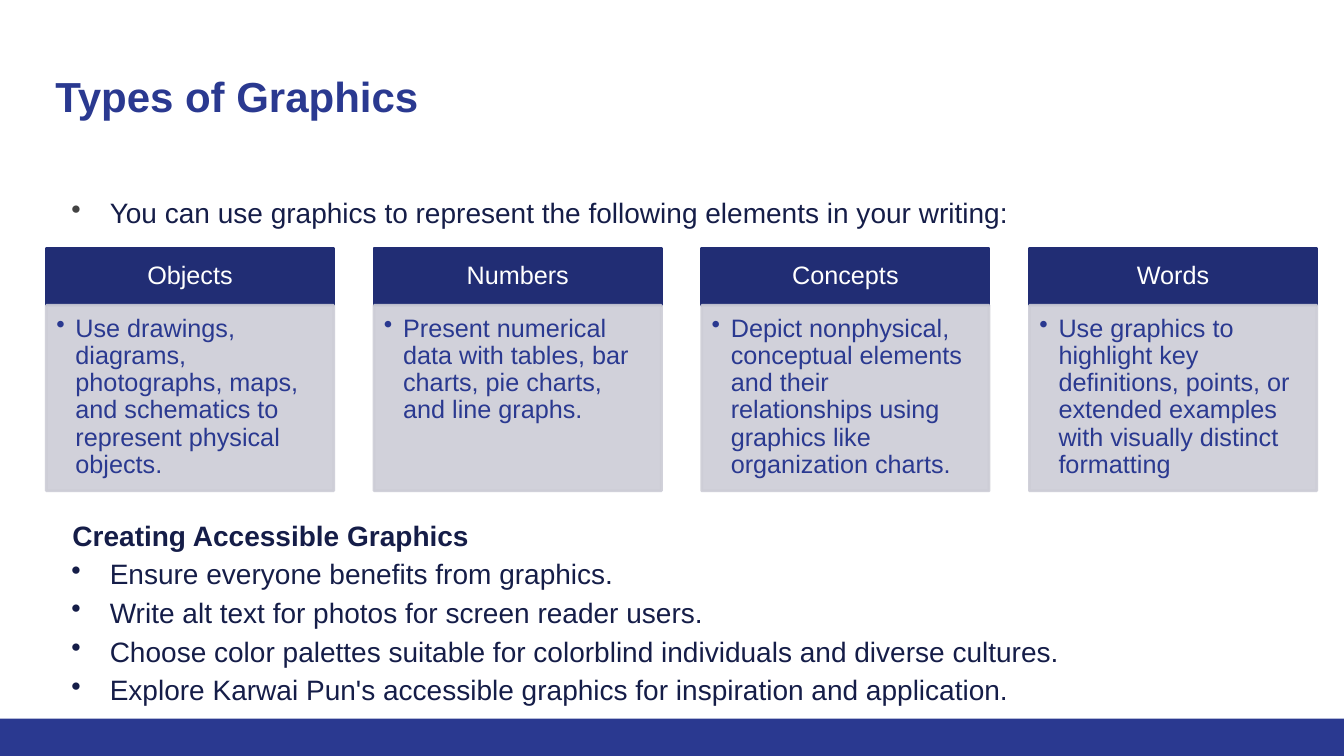
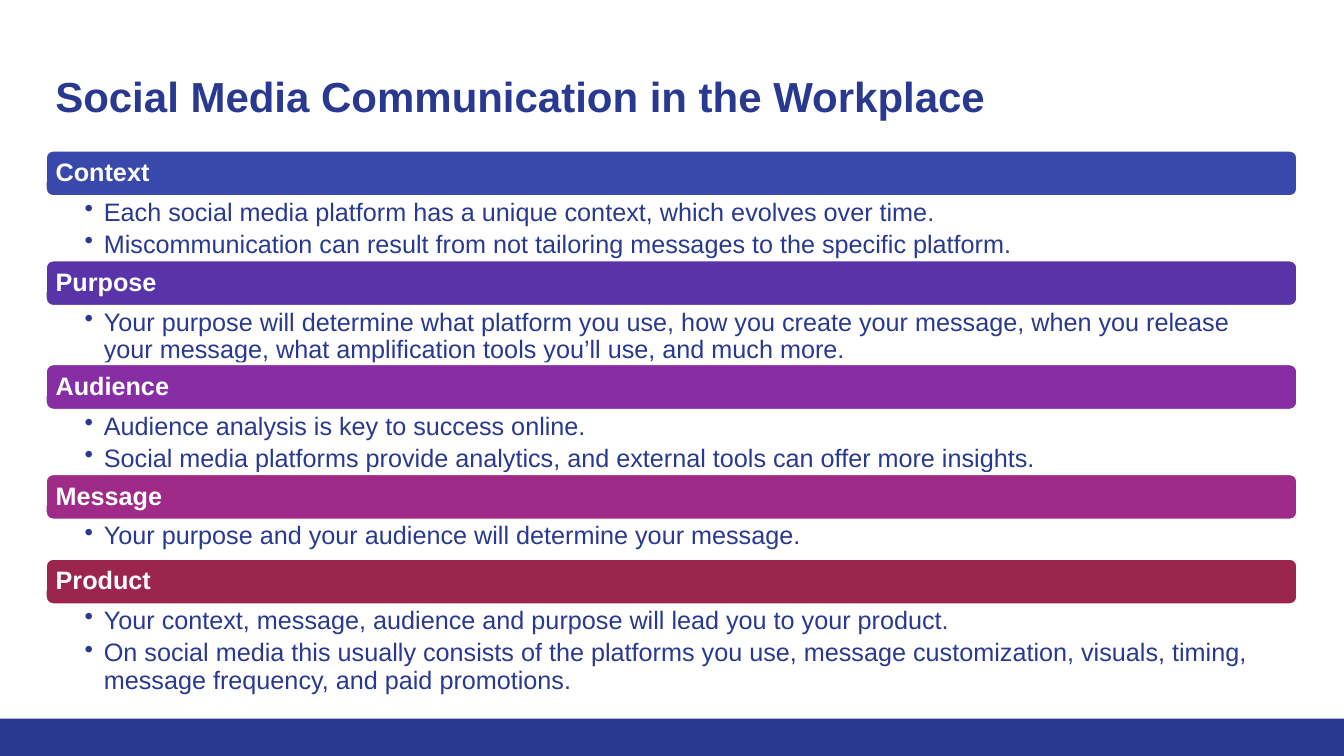
from lxml import etree
from pptx import Presentation
from pptx import util as u
from pptx.dml.color import RGBColor
from pptx.enum import shapes, text
from pptx.oxml.ns import qn

Inches, Pt = u.Inches, u.Pt

BLUE = RGBColor(0x2A, 0x39, 0x90)
NAVY = RGBColor(0x21, 0x2D, 0x74)
INK = RGBColor(0x15, 0x1D, 0x48)
CARD_GRAY = RGBColor(0xCD, 0xCD, 0xD6)
BULLET_GRAY = RGBColor(0x43, 0x43, 0x43)
WHITE = RGBColor(0xFF, 0xFF, 0xFF)
INDIGO = RGBColor(0x39, 0x49, 0xAB)
VIOLET = RGBColor(0x58, 0x34, 0xA8)
PURPLE = RGBColor(0x88, 0x2E, 0xA4)
MAGENTA = RGBColor(0xA0, 0x2A, 0x87)
CRIMSON = RGBColor(0x9C, 0x25, 0x4D)

FONT = "Arial"
SLIDE_W, SLIDE_H = 13.33, 7.5
FOOTER_H = 0.37
MARGIN, CONTENT_W = 0.45, 12.42
EVEN_INSETS = (0.1, 0.1, 0.1, 0.1)

CARDS = [
    ("Objects", "Use drawings, diagrams, photographs, maps, and schematics to "
                "represent physical objects."),
    ("Numbers", "Present numerical data with tables, bar charts, pie charts, "
                "and line graphs."),
    ("Concepts", "Depict nonphysical, conceptual elements and their "
                 "relationships using graphics like organization charts."),
    ("Words", "Use graphics to highlight key definitions, points, or extended "
              "examples with visually distinct formatting"),
]

ACCESSIBILITY = [
    "Ensure everyone benefits from graphics.",
    "Write alt text for photos for screen reader users.",
    "Choose color palettes suitable for colorblind individuals and diverse cultures.",
    "Explore Karwai Pun's accessible graphics for inspiration and application.",
]

SECTIONS = [
    ("Context", INDIGO, 0.63, [
        "Each social media platform has a unique context, which evolves over time.",
        "Miscommunication can result from not tailoring messages to the specific platform.",
    ]),
    ("Purpose", VIOLET, 0.57, [
        "Your purpose will determine what platform you use, how you create your "
        "message, when you release your message, what amplification tools you’ll "
        "use, and much more.",
    ]),
    ("Audience", PURPLE, 0.63, [
        "Audience analysis is key to success online.",
        "Social media platforms provide analytics, and external tools can offer "
        "more insights.",
    ]),
    ("Message", MAGENTA, 0.38, [
        "Your purpose and your audience will determine your message.",
    ]),
    ("Product", CRIMSON, 0.9, [
        "Your context, message, audience and purpose will lead you to your product.",
        "On social media this usually consists of the platforms you use, message "
        "customization, visuals, timing, message frequency, and paid promotions.",
    ]),
]


def set_indent(paragraph, left, first=0.0, bullet=False, bullet_color=None):
    props = paragraph._p.get_or_add_pPr()
    props.set("marL", str(Inches(left)))
    props.set("indent", str(Inches(first)))
    if bullet_color is not None:
        color = etree.SubElement(props, qn("a:buClr"))
        etree.SubElement(color, qn("a:srgbClr")).set("val", str(bullet_color))
    if bullet:
        etree.SubElement(props, qn("a:buChar")).set("char", "•")


def style(paragraph, size, color, bold=False, spacing=None, after=0):
    paragraph.space_after = Pt(after)
    if spacing:
        paragraph.line_spacing = spacing
    for run in paragraph.runs:
        run.font.name = FONT
        run.font.size = Pt(size)
        run.font.bold = bold
        run.font.color.rgb = color


def set_frame(holder, lines, insets, anchor=text.MSO_ANCHOR.TOP):
    frame = holder.text_frame
    frame.text = "\n".join(lines)
    frame.word_wrap = True
    frame.vertical_anchor = anchor
    (frame.margin_left, frame.margin_top,
     frame.margin_right, frame.margin_bottom) = map(Inches, insets)
    for paragraph in frame.paragraphs:
        paragraph.alignment = text.PP_ALIGN.LEFT
    return frame.paragraphs


def add_text(slide, box, lines, insets=EVEN_INSETS):
    return set_frame(slide.shapes.add_textbox(*map(Inches, box)), lines, insets)


def add_panel(slide, box, fill, line=None, kind=shapes.MSO_SHAPE.RECTANGLE):
    panel = slide.shapes.add_shape(kind, *map(Inches, box))
    panel.shadow.inherit = False
    panel.fill.solid()
    panel.fill.fore_color.rgb = fill
    if line is None:
        panel.line.fill.background()
    else:
        panel.line.color.rgb = line
        panel.line.width = Pt(2)
    return panel


def set_opacity(panel, percent):
    for color in panel._element.spPr.iter(qn("a:srgbClr")):
        etree.SubElement(color, qn("a:alpha")).set("val", str(percent * 1000))


def add_base_slide(deck, title):
    slide = deck.slides.add_slide(deck.slide_layouts[6])
    add_panel(slide, (0, SLIDE_H - FOOTER_H, SLIDE_W, FOOTER_H), BLUE)
    heading, = add_text(slide, (MARGIN, 0.6, CONTENT_W, 0.89), [title])
    style(heading, 30, BLUE, bold=True)
    return slide


def add_card(slide, box, name, description):
    left, top, width, height = box
    header_h = 0.57
    header = add_panel(slide, (left, top, width, header_h), NAVY, NAVY)
    label, = set_frame(header, [name], (0.14, 0.08, 0.14, 0.08),
                       text.MSO_ANCHOR.MIDDLE)
    label.alignment = text.PP_ALIGN.CENTER
    style(label, 18, WHITE, spacing=0.9, after=6.3)

    body = add_panel(slide, (left, top + header_h, width, height - header_h),
                     CARD_GRAY, CARD_GRAY)
    set_opacity(body, 90)
    detail, = set_frame(body, [description], (0.1, 0.1, 0.14, 0.16))
    set_indent(detail, 0.19, -0.19, bullet=True)
    style(detail, 18, BLUE, spacing=0.9, after=2.7)


def add_section(slide, box, name, color, points):
    left, top, width, height = box
    bar_h = 0.46
    bar = add_panel(slide, (left, top, width, bar_h), color, WHITE,
                    shapes.MSO_SHAPE.ROUNDED_RECTANGLE)
    label, = set_frame(bar, [name], (0.08, 0.07, 0.08, 0.07),
                       text.MSO_ANCHOR.MIDDLE)
    style(label, 18, WHITE, bold=True, spacing=0.9, after=6.3)

    details = add_text(slide, (left, top + bar_h, width, height - bar_h),
                       points, (0.39, 0.03, 0.14, 0.03))
    for detail in details:
        set_indent(detail, 0.19, -0.19, bullet=True)
        style(detail, 18, BLUE, spacing=0.9, after=3.6)


def build_graphics_slide(deck):
    slide = add_base_slide(deck, "Types of Graphics")
    intro, = add_text(
        slide, (MARGIN, 1.79, CONTENT_W, 0.72),
        ["You can use graphics to represent the following elements in your writing:"])
    set_indent(intro, 0.54, -0.38, bullet=True, bullet_color=BULLET_GRAY)
    style(intro, 20, INK, spacing=1.15)

    card_w, card_step = 2.85, 3.25
    for index, (name, description) in enumerate(CARDS):
        add_card(slide, (0.46 + index * card_step, 2.46, card_w, 2.41),
                 name, description)

    heading, *tips = add_text(slide, (MARGIN, 4.99, CONTENT_W, 2.1),
                              ["Creating Accessible Graphics", *ACCESSIBILITY])
    set_indent(heading, 0.17)
    style(heading, 20, INK, bold=True, spacing=1.15)
    for tip in tips:
        set_indent(tip, 0.54, -0.38, bullet=True)
        style(tip, 20, INK, spacing=1.15)


def build_social_media_slide(deck):
    slide = add_base_slide(deck, "Social Media Communication in the Workplace")
    top = 1.49
    for name, color, points_h, points in SECTIONS:
        height = 0.46 + points_h
        add_section(slide, (MARGIN, top, CONTENT_W, height), name, color, points)
        top += height


def main():
    deck = Presentation()
    deck.slide_width = Inches(SLIDE_W)
    deck.slide_height = Inches(SLIDE_H)
    build_graphics_slide(deck)
    build_social_media_slide(deck)
    deck.save("out.pptx")


if __name__ == "__main__":
    main()
